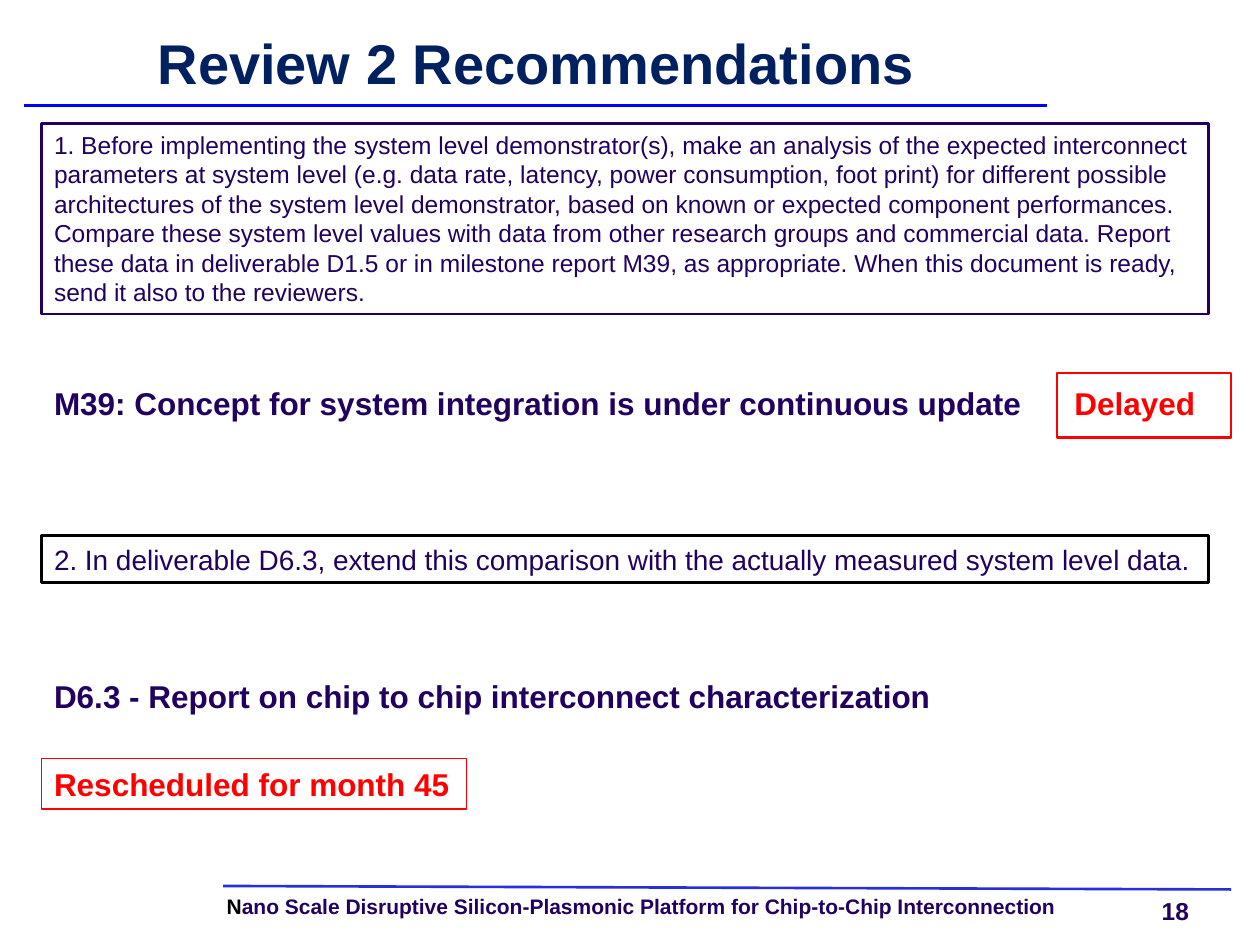
from lxml.etree import SubElement
from pptx import Presentation
from pptx.dml.color import RGBColor
from pptx.enum.shapes import MSO_CONNECTOR, MSO_SHAPE
from pptx.enum.text import MSO_ANCHOR, PP_ALIGN
from pptx.oxml.ns import qn
from pptx.util import Cm, Pt

INK = "220060"
RED = "FF0000"
LEFT = 0.84
WIDTH = 23.52
INTERCONNECT_ADVICE = (
    "1. Before implementing the system level demonstrator(s), make an analysis of the "
    "expected interconnect parameters at system level (e.g. data rate, latency, power "
    "consumption, foot print) for different possible architectures of the system level "
    "demonstrator, based on known or expected component performances. Compare these "
    "system level values with data from other research groups and commercial data. "
    "Report these data in deliverable D1.5 or in milestone report M39, as appropriate. "
    "When this document is ready, send it also to the reviewers."
)


def color(code):
    """Turn a hex string into a colour."""
    return RGBColor.from_string(code)


def write(holder, runs, size, bold=False, wrap=True, inset=True,
          align=PP_ALIGN.LEFT, anchor=MSO_ANCHOR.TOP, spacing=None):
    """Write one paragraph of (text, colour) runs into a shape."""
    frame = holder.text_frame
    frame.word_wrap = wrap
    frame.vertical_anchor = anchor
    frame.margin_left = frame.margin_right = Cm(0.25 if inset else 0)
    frame.margin_top = frame.margin_bottom = Cm(0.13 if inset else 0)
    paragraph = frame.paragraphs[0]
    paragraph.alignment = align
    paragraph.line_spacing = spacing
    for text, ink in runs:
        run = paragraph.add_run()
        run.text = text
        run.font.name = "Arial"
        run.font.size = Pt(size)
        run.font.bold = bold
        run.font.color.rgb = color(ink)


def add_label(slide, box, runs, size, **style):
    """Add a plain text box."""
    label = slide.shapes.add_textbox(*map(Cm, box))
    write(label, runs, size, **style)


def add_frame(slide, box, outline, weight=1.5):
    """Add an unfilled outlined rectangle and return it."""
    frame = slide.shapes.add_shape(MSO_SHAPE.RECTANGLE, *map(Cm, box))
    frame.shadow.inherit = False
    frame.fill.background()
    frame.line.color.rgb = color(outline)
    frame.line.width = Pt(weight)
    return frame


def add_rule(slide, ends, ink):
    """Add a straight line without shadow."""
    rule = slide.shapes.add_connector(MSO_CONNECTOR.STRAIGHT, *map(Cm, ends))
    rule.line.color.rgb = color(ink)
    rule.line.width = Pt(1.5)
    SubElement(rule.element.spPr, qn("a:effectLst"))


def add_footer(slide):
    """Add the project name, page number and footer line."""
    project = [("N", "000000"),
               ("ano Scale Disruptive Silicon-Plasmonic Platform for "
                "Chip-to-Chip Interconnection", INK)]
    add_label(slide, (4.57, 18.06, 18.14, 0.46), project, 12,
              bold=True, inset=False, spacing=0.9)
    add_label(slide, (23.42, 18.06, 1.02, 0.58), [("18", INK)], 14,
              bold=True, wrap=False, inset=False)
    add_rule(slide, (4.5, 17.86, 24.82, 17.93), "262FDA")


def add_title(slide):
    """Add the heading and the line below it."""
    add_rule(slide, (0.48, 2.13, 21.11, 2.13), "0000FF")
    add_label(slide, (0.51, 0.51, 20.6, 1.7),
              [("Review 2 Recommendations", "002060")], 32, bold=True, inset=False,
              align=PP_ALIGN.CENTER, anchor=MSO_ANCHOR.MIDDLE, spacing=Pt(32))


def add_interconnect_review(slide):
    """Add the first recommendation with its status."""
    advice = add_frame(slide, (LEFT, 2.49, WIDTH, 3.84), INK)
    write(advice, [(INTERCONNECT_ADVICE, INK)], 14)
    add_label(slide, (LEFT, 7.62, WIDTH, 1.02),
              [("M39: Concept for system integration is under continuous update", INK)],
              18, bold=True)
    add_label(slide, (21.41, 7.62, 2.97, 1.02), [("Delayed", RED)], 18,
              bold=True, wrap=False)
    add_frame(slide, (21.31, 7.52, 3.51, 1.3), RED)


def add_measurement_review(slide):
    """Add the second recommendation with its status."""
    advice = add_frame(slide, (LEFT, 10.8, WIDTH, 0.94), "000000")
    write(advice, [("2. In deliverable D6.3, extend this comparison with the actually "
                    "measured system level data.", INK)], 16)
    add_label(slide, (LEFT, 13.51, 20.68, 1.02),
              [("D6.3 - Report on chip to chip interconnect characterization", INK)],
              18, bold=True)
    status = add_frame(slide, (LEFT, 15.29, 8.56, 1.02), RED, 0.75)
    write(status, [("Rescheduled for month 45", RED)], 18, bold=True, wrap=False)


def main():
    """Build and save the slide."""
    deck = Presentation()
    deck.slide_width, deck.slide_height = Cm(25.4), Cm(19.05)
    slide = deck.slides.add_slide(deck.slide_layouts[6])
    add_footer(slide)
    add_title(slide)
    add_interconnect_review(slide)
    add_measurement_review(slide)
    deck.save("out.pptx")


if __name__ == "__main__":
    main()
